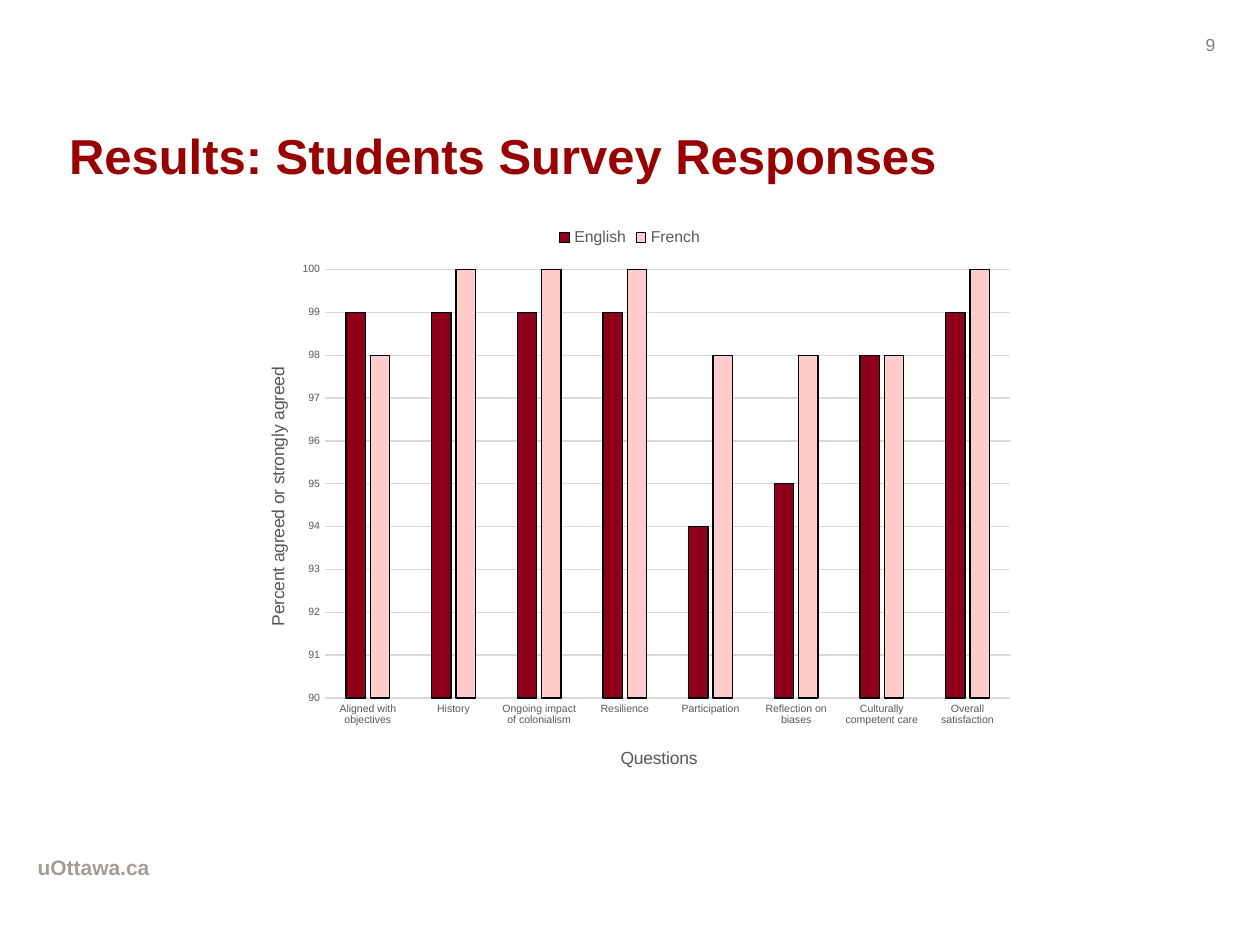
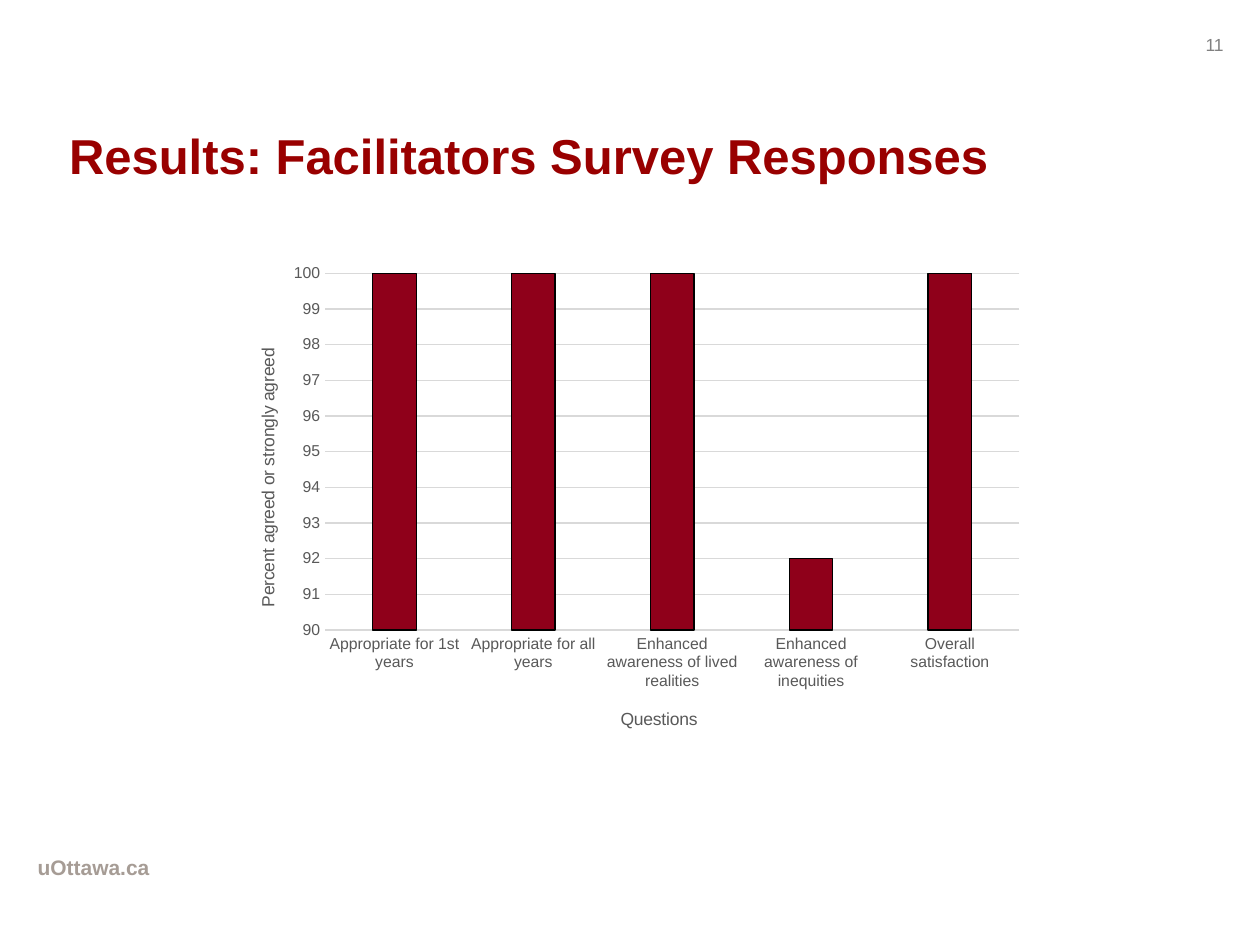
from lxml import etree
from pptx import Presentation, util as u
from pptx.chart.data import CategoryChartData
from pptx.dml.color import RGBColor
from pptx.enum import chart as ch, text
from pptx.oxml.ns import qn

WIDE, HIGH = 10, 7.5
FONT = "Arial"
WHITE = RGBColor(0xFF, 0xFF, 0xFF)
RED = RGBColor(0x99, 0x00, 0x00)
WINE = RGBColor(0x8F, 0x00, 0x1A)
PINK = RGBColor(0xFF, 0xCC, 0xCC)
BLACK = RGBColor(0x00, 0x00, 0x00)
GREY = RGBColor(0x80, 0x80, 0x80)
DARK = RGBColor(0x59, 0x59, 0x59)
PALE = RGBColor(0xD9, 0xD9, 0xD9)
STONE = RGBColor(0xA6, 0x9C, 0x95)

SITE = "uOttawa.ca"
X_NAME = "Questions"
Y_NAME = "Percent agreed or strongly agreed"
FILLS = [WINE, PINK]

# Boxes are left, top, width, height in inches; names are left, top.
SLIDES = [
    dict(
        page="9", title="Results: Students Survey Responses",
        box=(1.86, 1.7, 6.28, 4.57), plot=(2.58, 2.14, 5.44, 3.4),
        x_at=(4.9, 5.9), y_at=(2.09, 2.89), tick=6, legend=True,
        cats=["Aligned with objectives", "History",
              "Ongoing impact of colonialism", "Resilience", "Participation",
              "Reflection on biases", "Culturally competent care",
              "Overall satisfaction"],
        series={"English": [99, 99, 99, 99, 94, 95, 98, 99],
                "French": [98, 100, 100, 100, 98, 98, 98, 100]},
    ),
    dict(
        page="11", title="Results: Facilitators Survey Responses",
        box=(1.78, 2.02, 6.44, 3.94), plot=(2.58, 2.17, 5.51, 2.83),
        x_at=(4.9, 5.59), y_at=(2.01, 2.74), tick=9, legend=False,
        cats=["Appropriate for 1st years", "Appropriate for all years",
              "Enhanced awareness of lived realities",
              "Enhanced awareness of inequities", "Overall satisfaction"],
        series={"Series 1": [100, 100, 100, 92, 100]},
    ),
]


def style(font, size, color, bold=False):
    font.name, font.size, font.bold = FONT, u.Pt(size), bold
    font.color.rgb = color


def stroke(line, color):
    line.color.rgb, line.width = color, u.Pt(0.75)


def write(slide, words, box, size, color, bold=False, wrap=True,
          anchor=text.MSO_ANCHOR.TOP):
    frame = slide.shapes.add_textbox(*map(u.Inches, box)).text_frame
    frame.word_wrap, frame.vertical_anchor = wrap, anchor
    run = frame.paragraphs[0].add_run()
    run.text = words
    style(run.font, size, color, bold)


def place(node, box, spot, index):
    """Fix a chart part at a slide position, as shares of the chart box."""
    left, top, wide, high = box
    shares = [(spot[0] - left) / wide, (spot[1] - top) / high]
    if len(spot) == 4:
        shares += [spot[2] / wide, spot[3] / high]
    for old in node.findall(qn("c:layout")):
        node.remove(old)
    layout = etree.Element(qn("c:layout"))
    node.insert(index, layout)
    manual = etree.SubElement(layout, qn("c:manualLayout"))
    if len(spot) == 4:
        etree.SubElement(manual, qn("c:layoutTarget")).set("val", "inner")
    for key in "xy":
        etree.SubElement(manual, qn(f"c:{key}Mode")).set("val", "edge")
    for key, share in zip("xywh", shares):
        etree.SubElement(manual, qn(f"c:{key}")).set("val", f"{share:.4f}")


def label(axis, words, box, spot, turn=0):
    """Name an axis; turn is in degrees."""
    title = axis.axis_title
    frame = title.text_frame
    run = frame.paragraphs[0].add_run()
    run.text = words
    style(run.font, 10, DARK)
    body = frame._txBody.find(qn("a:bodyPr"))
    body.set("rot", str(turn * 60000))
    body.set("vert", "horz")
    place(title._element, box, spot, 1)


def draw(slide, item):
    data = CategoryChartData()
    data.categories = item["cats"]
    for name, vals in item["series"].items():
        data.add_series(name, vals)
    box = item["box"]
    chart = slide.shapes.add_chart(ch.XL_CHART_TYPE.COLUMN_CLUSTERED,
                                   *map(u.Inches, box), data).chart
    style(chart.font, 10, BLACK)
    chart.has_title = False
    chart.has_legend = item["legend"]
    if item["legend"]:
        chart.legend.position = ch.XL_LEGEND_POSITION.TOP
        chart.legend.include_in_layout = False
        style(chart.legend.font, 9, DARK)

    bars = chart.plots[0]
    bars.gap_width, bars.overlap = 219, -27
    bars.vary_by_categories = False
    for row, fill in zip(bars.series, FILLS):
        row.format.fill.solid()
        row.format.fill.fore_color.rgb = fill
        stroke(row.format.line, BLACK)

    cat, val = chart.category_axis, chart.value_axis
    for axis in (cat, val):
        axis.major_tick_mark = axis.minor_tick_mark = ch.XL_TICK_MARK.NONE
        style(axis.tick_labels.font, item["tick"], DARK)
    stroke(cat.format.line, PALE)
    val.format.line.fill.background()
    val.minimum_scale, val.maximum_scale, val.major_unit = 90, 100, 1
    stroke(val.major_gridlines.format.line, PALE)
    label(cat, X_NAME, box, item["x_at"])
    label(val, Y_NAME, box, item["y_at"], -90)
    area = chart._chartSpace.find(f".//{qn('c:plotArea')}")
    place(area, box, item["plot"], 0)


def main():
    deck = Presentation()
    deck.slide_width, deck.slide_height = u.Inches(WIDE), u.Inches(HIGH)
    for item in SLIDES:
        slide = deck.slides.add_slide(deck.slide_layouts[6])
        slide.background.fill.solid()
        slide.background.fill.fore_color.rgb = WHITE
        write(slide, item["page"], (9.47, 0.22, 0.47, 0.27), 10, GREY,
              wrap=False)
        write(slide, SITE, (0.2, 6.73, 4.96, 0.39), 12, STONE, True)
        write(slide, item["title"], (0.45, 0.76, 8.5, 0.94), 28, RED, True,
              anchor=text.MSO_ANCHOR.MIDDLE)
        draw(slide, item)
    deck.save("out.pptx")


if __name__ == "__main__":
    main()
